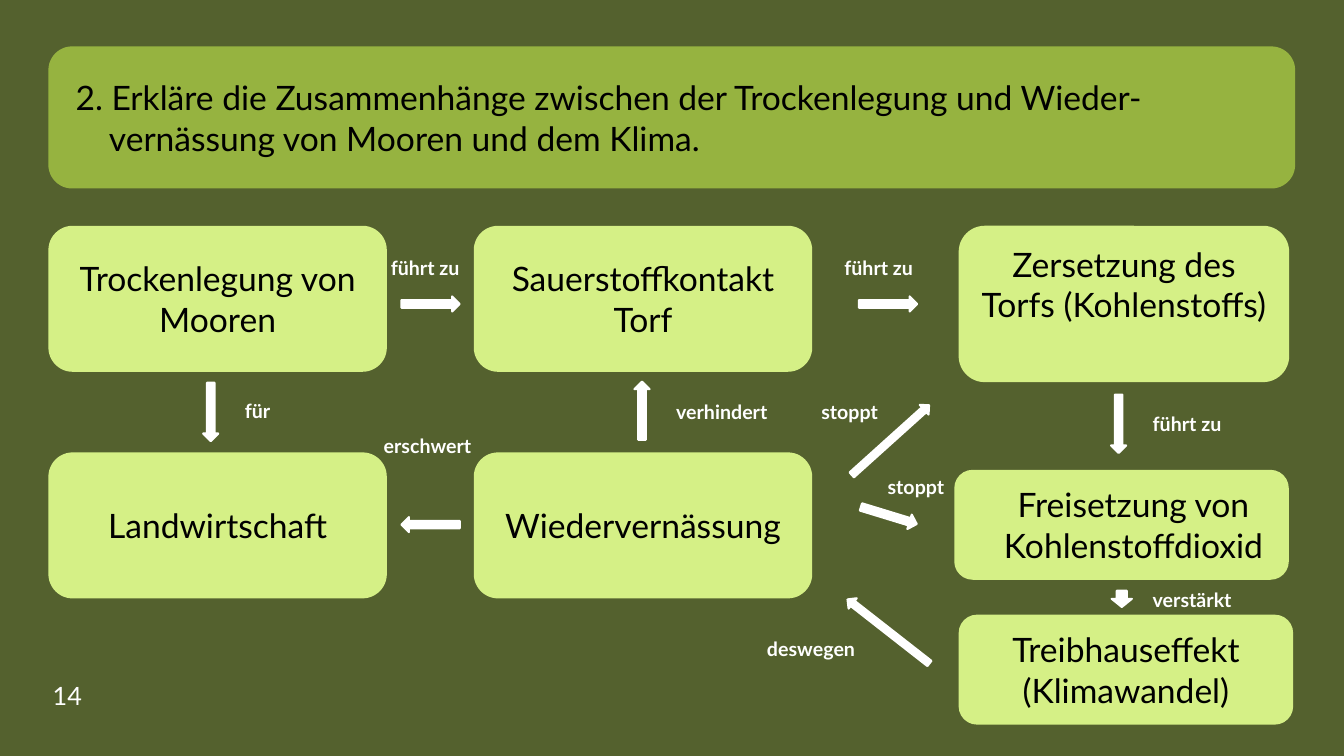
from dataclasses import dataclass

from pptx import Presentation
from pptx.dml.color import RGBColor
from pptx.enum.shapes import MSO_SHAPE
from pptx.enum.text import MSO_ANCHOR, MSO_AUTO_SIZE, PP_ALIGN
from pptx.util import Cm, Pt

ROUND, ARROW = MSO_SHAPE.ROUNDED_RECTANGLE, MSO_SHAPE.RIGHT_ARROW
LEFT, CENTER = PP_ALIGN.LEFT, PP_ALIGN.CENTER
TOP, MIDDLE = MSO_ANCHOR.TOP, MSO_ANCHOR.MIDDLE
FIXED = MSO_AUTO_SIZE.NONE


@dataclass(frozen=True)
class Theme:
    font: str = "Lato"
    back: str = "54612E"
    banner: str = "96B340"
    node: str = "D5F086"
    dark: str = "000000"
    light: str = "FFFFFF"
    body: int = 24
    number: int = 18
    label: int = 14


def put(item, values):
    for name, value in values.items():
        setattr(item, name, value)


class Board:
    """Draws the parts of a concept map on one slide."""

    def __init__(self, deck, theme):
        self.theme = theme
        self.slide = deck.slides.add_slide(deck.slide_layouts[5])
        self.shapes = self.slide.shapes
        self.paint(self.slide.background, theme.back)

    def paint(self, item, color):
        item.fill.solid()
        item.fill.fore_color.rgb = RGBColor.from_string(color)

    def words(self, shape, lines, size, color, align=CENTER, anchor=MIDDLE,
              bold=False):
        frame = shape.text_frame
        frame.text = "\n".join(lines)
        put(frame, {"word_wrap": True, "auto_size": FIXED,
                    "vertical_anchor": anchor})
        for para in frame.paragraphs:
            para.alignment = align
            for run in para.runs:
                put(run.font, {"name": self.theme.font, "size": Pt(size),
                               "bold": bold})
                run.font.color.rgb = RGBColor.from_string(color)
        return frame

    def shape(self, kind, box, color):
        shape = self.shapes.add_shape(kind, *map(Cm, box))
        shape.shadow.inherit = False
        self.paint(shape, color)
        shape.line.fill.background()
        return shape

    def title(self, box, lines, hang):
        self.shape(ROUND, box, self.theme.banner)
        title = self.shapes.title
        self.shapes.element.append(title.element)
        left, top, width, height = map(Cm, box)
        put(title, {"left": left + Cm(0.43), "top": top,
                    "width": width - Cm(0.86), "height": height})
        frame = self.words(title, lines, self.theme.body, self.theme.dark,
                           LEFT)
        for para in frame.paragraphs[1:]:
            para._p.get_or_add_pPr().set("marL", str(Cm(hang)))

    def node(self, box, text, shift=0, lift=0):
        shape = self.shape(ROUND, box, self.theme.node)
        frame = self.words(shape, [text], self.theme.body, self.theme.dark)
        put(frame, {"margin_left": Cm(0.25 + shift),
                    "margin_right": Cm(0.25),
                    "margin_bottom": Cm(0.13 + lift)})

    def arrow(self, mid, turn, size=(1.47, 0.38)):
        corner = [m - s / 2 for m, s in zip(mid, size)]
        shape = self.shape(ARROW, (*corner, *size), self.theme.light)
        shape.rotation = turn
        self.paint(shape.line, self.theme.light)
        shape.line.width = Pt(1.5)

    def label(self, box, text, size, bold=True):
        shape = self.shapes.add_textbox(*map(Cm, box))
        self.words(shape, [text], size, self.theme.light, LEFT, TOP, bold)


def main():
    deck = Presentation()
    put(deck, {"slide_width": Cm(33.87), "slide_height": Cm(19.05)})
    theme = Theme()
    board = Board(deck, theme)

    board.title((1.22, 1.17, 31.42, 3.58), [
        "2. Erkläre die Zusammenhänge zwischen der Trockenlegung und Wieder-",
        "vernässung von Mooren und dem Klima."], 0.84)

    grid = [["Trockenlegung von Mooren", "Sauerstoffkontakt Torf"],
            ["Landwirtschaft", "Wiedervernässung"]]
    for row, texts in enumerate(grid):
        for col, text in enumerate(texts):
            board.node((1.22 + 10.72 * col, 5.69 + 5.71 * row, 8.53, 3.68),
                       text)
    board.node((24.16, 5.69, 8.33, 3.94),
               "Zersetzung des Torfs (Kohlenstoffs)", lift=1)
    board.node((24.05, 11.84, 8.43, 2.77),
               "Freisetzung von Kohlenstoffdioxid", shift=0.6)
    board.node((24.16, 15.49, 8.43, 2.77), "Treibhauseffekt (Klimawandel)")

    for x, y, turn in [(10.85, 7.66, 0), (22.38, 7.66, 0),
                       (10.85, 13.22, 180), (5.31, 10.38, 90),
                       (16.18, 10.35, 270), (28.19, 10.68, 90),
                       (22.4, 12.99, 17)]:
        board.arrow((x, y), turn)
    for x, y, turn in [(22.44, 11.09, 318), (22.39, 15.91, 218)]:
        board.arrow((x, y), turn, (2.62, 0.33))
    board.arrow((28.27, 15.09), 90, (0.41, 0.51))

    for x, y, text in [(9.6, 6.32, "führt zu"), (21.03, 6.32, "führt zu"),
                       (9.42, 10.82, "erschwert"), (5.92, 9.93, "für"),
                       (16.79, 9.96, "verhindert"), (20.45, 9.96, "stoppt"),
                       (22.12, 11.84, "stoppt"), (28.8, 10.26, "führt zu"),
                       (28.8, 14.68, "verstärkt"), (19.08, 15.93, "deswegen")]:
        board.label((x, y, 3.2, 0.86), text, theme.label)
    board.label((1.08, 17.02, 1.45, 1.02), "14", theme.number, False)

    deck.save("out.pptx")


if __name__ == "__main__":
    main()
